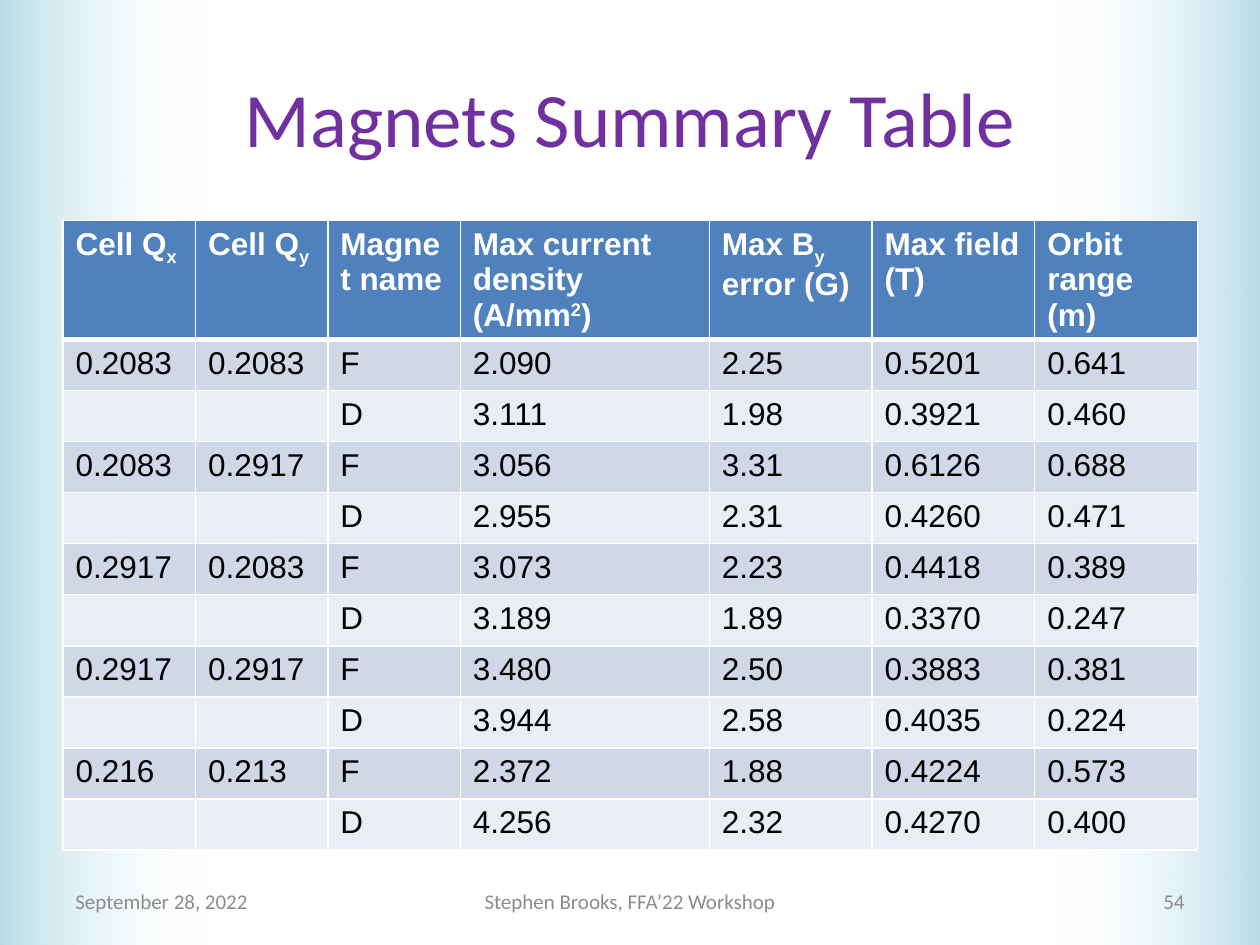
"""Build the magnets summary table slide."""
from pptx import Presentation
from pptx.dml.color import RGBColor
from pptx.enum.shapes import MSO_SHAPE as Shape
from pptx.enum.text import MSO_ANCHOR as Anchor, PP_ALIGN as Align
from pptx.oxml.ns import qn
from pptx.util import Cm, Pt
from lxml.etree import SubElement as Sub

WHITE = RGBColor(0xFF, 0xFF, 0xFF)
BLACK = RGBColor(0, 0, 0)
PURPLE = RGBColor(0x70, 0x30, 0xA0)
BLUE = RGBColor(0x4F, 0x81, 0xBD)
AQUA = RGBColor(0xB7, 0xDE, 0xE8)
BANDS = RGBColor(0xD0, 0xD8, 0xE8), RGBColor(0xE9, 0xED, 0xF4)
GREY = RGBColor(0x8C, 0x8C, 0x8C)
DARK = RGBColor(0x89, 0x89, 0x89)

TITLE = "Magnets Summary Table"
SUB, SUP = -25000, 30000
HEAD = [
    [("Cell Q", 0), ("x", SUB)],
    [("Cell Q", 0), ("y", SUB)],
    [("Magnet name", 0)],
    [("Max current density (A/mm", 0), ("2", SUP), (")", 0)],
    [("Max B", 0), ("y", SUB), (" error (G)", 0)],
    [("Max field (T)", 0)],
    [("Orbit range (m)", 0)],
]
ROWS = [
    ("0.2083", "0.2083", "F", "2.090", "2.25", "0.5201", "0.641"),
    ("", "", "D", "3.111", "1.98", "0.3921", "0.460"),
    ("0.2083", "0.2917", "F", "3.056", "3.31", "0.6126", "0.688"),
    ("", "", "D", "2.955", "2.31", "0.4260", "0.471"),
    ("0.2917", "0.2083", "F", "3.073", "2.23", "0.4418", "0.389"),
    ("", "", "D", "3.189", "1.89", "0.3370", "0.247"),
    ("0.2917", "0.2917", "F", "3.480", "2.50", "0.3883", "0.381"),
    ("", "", "D", "3.944", "2.58", "0.4035", "0.224"),
    ("0.216", "0.213", "F", "2.372", "1.88", "0.4224", "0.573"),
    ("", "", "D", "4.256", "2.32", "0.4270", "0.400"),
]
COLS = [2.67] * 3 + [5.02] + [3.28] * 3
FOOT = [
    ("September 28, 2022", 1.27, 5.93, Align.LEFT, GREY),
    ("Stephen Brooks, FFA’22 Workshop", 8.68, 8.04, Align.CENTER, GREY),
    ("54", 18.2, 5.93, Align.RIGHT, DARK),
]
WIDE, HIGH, EDGE = 25.4, 19.05, 1.27
SIDE, ROW = 4.29, 1.03


def write(para, text, size, face, color, bold=False, shift=0):
    run = para.add_run()
    run.text = text
    font = run.font
    font.size, font.name, font.bold = Pt(size), face, bold
    font.color.rgb = color
    if shift:
        run._r.get_or_add_rPr().set("baseline", str(shift))


def add_side(slide, left, turn):
    side = slide.shapes.add_shape(Shape.RECTANGLE, Cm(left), 0, Cm(SIDE), Cm(HIGH))
    side.rotation = turn
    side.shadow.inherit = False
    side.line.fill.background()
    side.fill.gradient()
    side.fill.gradient_angle = 0
    for stop, color in zip(side.fill.gradient_stops, (AQUA, WHITE)):
        stop.color.rgb = color
    clear = side._element.xpath(".//a:gs/a:srgbClr")[-1]
    Sub(clear, qn("a:alpha")).set("val", "0")
    slide.shapes._spTree.insert(2, side._element)


def style(cell, color, base):
    props = cell._tc.get_or_add_tcPr()
    for edge, width in (("L", 1), ("R", 1), ("T", 1), ("B", base)):
        line = Sub(props, qn("a:ln" + edge), w=str(Pt(width)))
        Sub(Sub(line, qn("a:solidFill")), qn("a:srgbClr"), val=str(WHITE))
    cell.fill.solid()
    cell.fill.fore_color.rgb = color


def add_grid(slide):
    count = len(ROWS) + 1
    grid = slide.shapes.add_table(count, len(COLS), Cm(EDGE), Cm(4.45),
                                  Cm(sum(COLS)), Cm(ROW * count)).table
    for col, width in zip(grid.columns, COLS):
        col.width = Cm(width)
    for row in grid.rows:
        row.height = Cm(ROW)
    for c, parts in enumerate(HEAD):
        cell = grid.cell(0, c)
        style(cell, BLUE, 3)
        for text, shift in parts:
            write(cell.text_frame.paragraphs[0], text, 18, "Arial", WHITE, True, shift)
    for r, row in enumerate(ROWS):
        for c, text in enumerate(row):
            cell = grid.cell(r + 1, c)
            style(cell, BANDS[r % 2], 1)
            if text:
                write(cell.text_frame.paragraphs[0], text, 18, "Arial", BLACK)


def add_foot(slide, text, left, width, align, color):
    box = slide.shapes.add_textbox(Cm(left), Cm(17.66), Cm(width), Cm(1.01))
    frame = box.text_frame
    frame.word_wrap = True
    frame.vertical_anchor = Anchor.MIDDLE
    para = frame.paragraphs[0]
    para.alignment = align
    write(para, text, 12, "Calibri", color)


def main():
    deck = Presentation()
    deck.slide_width, deck.slide_height = Cm(WIDE), Cm(HIGH)
    slide = deck.slides.add_slide(deck.slide_layouts[5])
    title = slide.shapes.title
    title.left, title.top = Cm(EDGE), Cm(0.76)
    title.width, title.height = Cm(WIDE - 2 * EDGE), Cm(3.18)
    title.text_frame.vertical_anchor = Anchor.MIDDLE
    para = title.text_frame.paragraphs[0]
    para.alignment = Align.CENTER
    write(para, TITLE, 44, "Calibri", PURPLE)
    add_side(slide, 0, 0)
    add_side(slide, WIDE - SIDE, 180)
    add_grid(slide)
    for item in FOOT:
        add_foot(slide, *item)
    deck.save("out.pptx")


if __name__ == "__main__":
    main()
